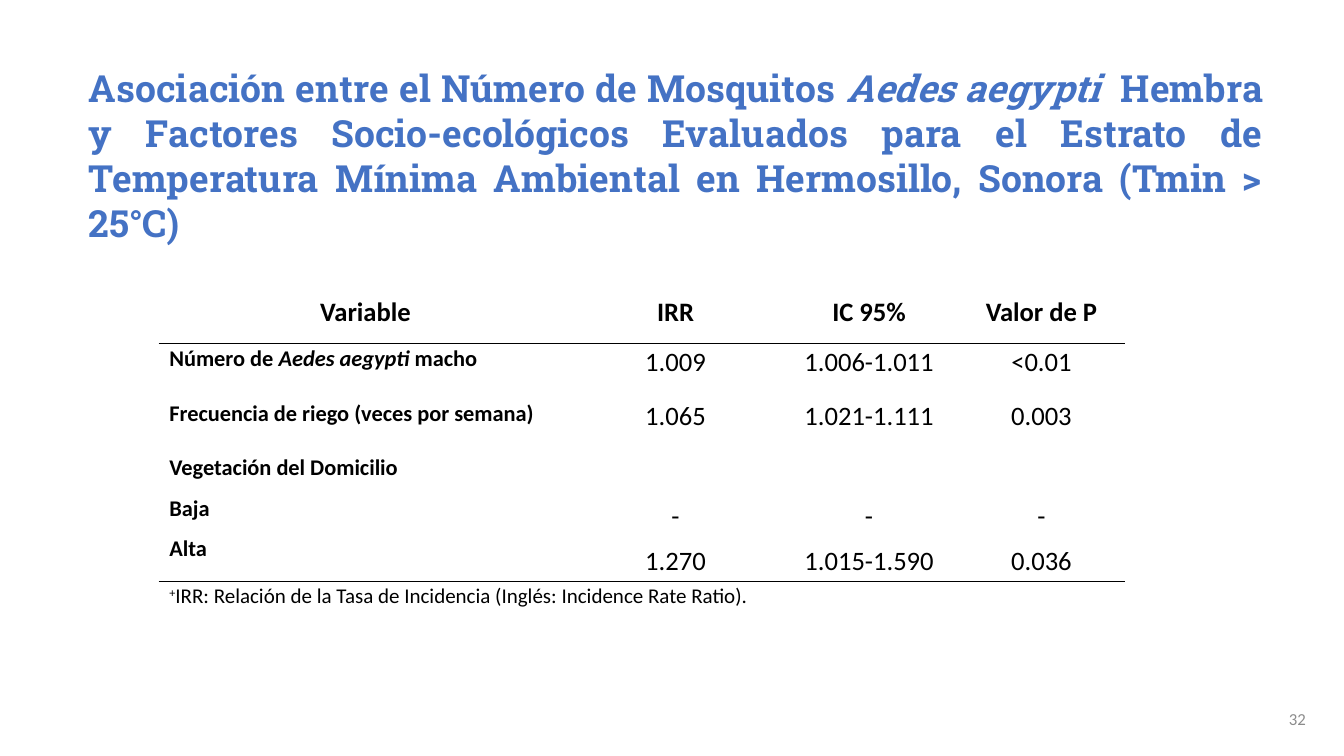
from lxml.etree import SubElement
from pptx import Presentation
from pptx.dml.color import RGBColor
from pptx.enum.text import MSO_ANCHOR as Anchor, PP_ALIGN as Align
from pptx.oxml import parse_xml
from pptx.oxml.ns import nsdecls, qn
from pptx.util import Inches, Pt

BLUE = RGBColor(0x44, 0x72, 0xC4)
BLACK = RGBColor(0, 0, 0)
GRAY = RGBColor(0x8C, 0x8C, 0x8C)

TITLE = [
    ("Asociación entre el Número de Mosquitos ", ""),
    ("Aedes aegypti ", "italic"),
    (" Hembra y Factores Socio-ecológicos Evaluados para el Estrato de "
     "Temperatura Mínima Ambiental en Hermosillo, Sonora (Tmin > 25°C)", ""),
]
HEADINGS = ["Variable", "IRR", "IC 95%", "Valor de P"]
MALES = [("Número de ", ""), ("Aedes aegypti ", "italic"), ("macho", "")]
RESULTS = [
    ([MALES], ["1.009"], ["1.006-1.011"], ["<0.01"]),
    (["Frecuencia de riego (veces por semana)"], ["1.065"], ["1.021-1.111"], ["0.003"]),
    (["Vegetación del Domicilio", "Baja", "Alta"],
     ["-", "1.270"], ["-", "1.015-1.590"], ["-", "0.036"]),
]
FOOTNOTE = [
    ("+", "superscript"),
    ("IRR: Relación de la Tasa de Incidencia (Inglés: Incidence Rate Ratio).", ""),
]
COLUMN_WIDTHS = [4.09, 2.06, 1.78, 1.64]
ROW_HEIGHTS = [0.54, 0.54, 0.54, 1.28, 0.54]
VEGETATION_ROW = 3
FOOTNOTE_ROW = 4
LABEL_LINE = 0.45


class SlideBuilder:
    body_font = "Calibri"
    title_font = "Roboto Slab"

    def __init__(self, slide):
        self.slide = slide

    def fill_text(self, frame, paragraphs, size, color=BLACK, font=None,
                  bold=False, align=Align.LEFT, spaced=False):
        frame.word_wrap = True
        for index, content in enumerate(paragraphs):
            paragraph = frame.add_paragraph() if index else frame.paragraphs[0]
            paragraph.alignment = align
            if spaced:
                paragraph.line_spacing = 1.07
                paragraph.space_after = Pt(8)
            paragraph.font.name = font or self.body_font
            paragraph.font.size = Pt(size)
            paragraph.font.bold = bold
            paragraph.font.color.rgb = color
            pieces = [(content, "")] if isinstance(content, str) else content
            for text, emphasis in pieces:
                run = paragraph.add_run()
                run.text = text
                if emphasis == "italic":
                    run.font.italic = True
                elif emphasis == "superscript":
                    run._r.get_or_add_rPr().set("baseline", "30000")

    def text(self, left, top, width, height, content, size, inset,
             anchor=Anchor.TOP, **style):
        frame = self.slide.shapes.add_textbox(
            Inches(left), Inches(top), Inches(width), Inches(height)).text_frame
        frame.margin_left = frame.margin_right = Inches(inset)
        frame.margin_top = frame.margin_bottom = Inches(inset)
        frame.vertical_anchor = anchor
        self.fill_text(frame, [content], size, **style)

    def table(self, left, top, widths, heights):
        table = self.slide.shapes.add_table(
            len(heights), len(widths), Inches(left), Inches(top),
            Inches(sum(widths)), Inches(sum(heights))).table
        table.first_row = table.horz_banding = False
        for column, width in zip(table.columns, widths):
            column.width = Inches(width)
        for row, height in zip(table.rows, heights):
            row.height = Inches(height)
        for cell in table.iter_cells():
            cell.fill.background()
        return table

    def cell(self, cell, paragraphs, size, side=0.1, top=0, bottom=0, **style):
        cell.margin_left = cell.margin_right = Inches(side)
        cell.margin_top, cell.margin_bottom = Inches(top), Inches(bottom)
        self.fill_text(cell.text_frame, paragraphs, size, **style)

    def rule_below(self, table, row):
        for index, edge in ((row, "lnB"), (row + 1, "lnT")):
            for cell in table.rows[index].cells:
                line = parse_xml(f'<a:{edge} {nsdecls("a")} w="{Pt(1)}"/>')
                fill = SubElement(line, qn("a:solidFill"))
                SubElement(fill, qn("a:srgbClr")).set("val", str(BLACK))
                cell._tc.get_or_add_tcPr().insert(0, line)


def main():
    presentation = Presentation()
    presentation.slide_width = Inches(13.33)
    presentation.slide_height = Inches(7.5)
    builder = SlideBuilder(presentation.slides.add_slide(presentation.slide_layouts[6]))

    builder.text(12.25, 6.93, 0.8, 0.57, "32", 12, 0.1, color=GRAY, align=Align.RIGHT)
    builder.text(0.75, 1.54, 11.91, 1.02, TITLE, 26.7, 0.13, anchor=Anchor.BOTTOM,
                 color=BLUE, font=builder.title_font, bold=True, align=Align.JUSTIFY)

    table = builder.table(1.58, 2.87, COLUMN_WIDTHS, ROW_HEIGHTS)
    for column, heading in enumerate(HEADINGS):
        builder.cell(table.cell(0, column), [heading], 19, side=0.13, top=0.07,
                     bottom=0.07, bold=True, align=Align.CENTER)
    for row, (variable, *estimates) in enumerate(RESULTS, start=1):
        builder.cell(table.cell(row, 0), variable, 16, bold=True, spaced=True)
        offset = LABEL_LINE if row == VEGETATION_ROW else 0
        for column, estimate in enumerate(estimates, start=1):
            builder.cell(table.cell(row, column), estimate, 19, top=offset,
                         align=Align.CENTER, spaced=True)

    footnote = table.cell(FOOTNOTE_ROW, 0)
    footnote.merge(table.cell(FOOTNOTE_ROW, len(HEADINGS) - 1))
    builder.cell(footnote, [FOOTNOTE], 15, align=Align.JUSTIFY, spaced=True)
    for row in (0, VEGETATION_ROW):
        builder.rule_below(table, row)

    presentation.save("out.pptx")


if __name__ == "__main__":
    main()
